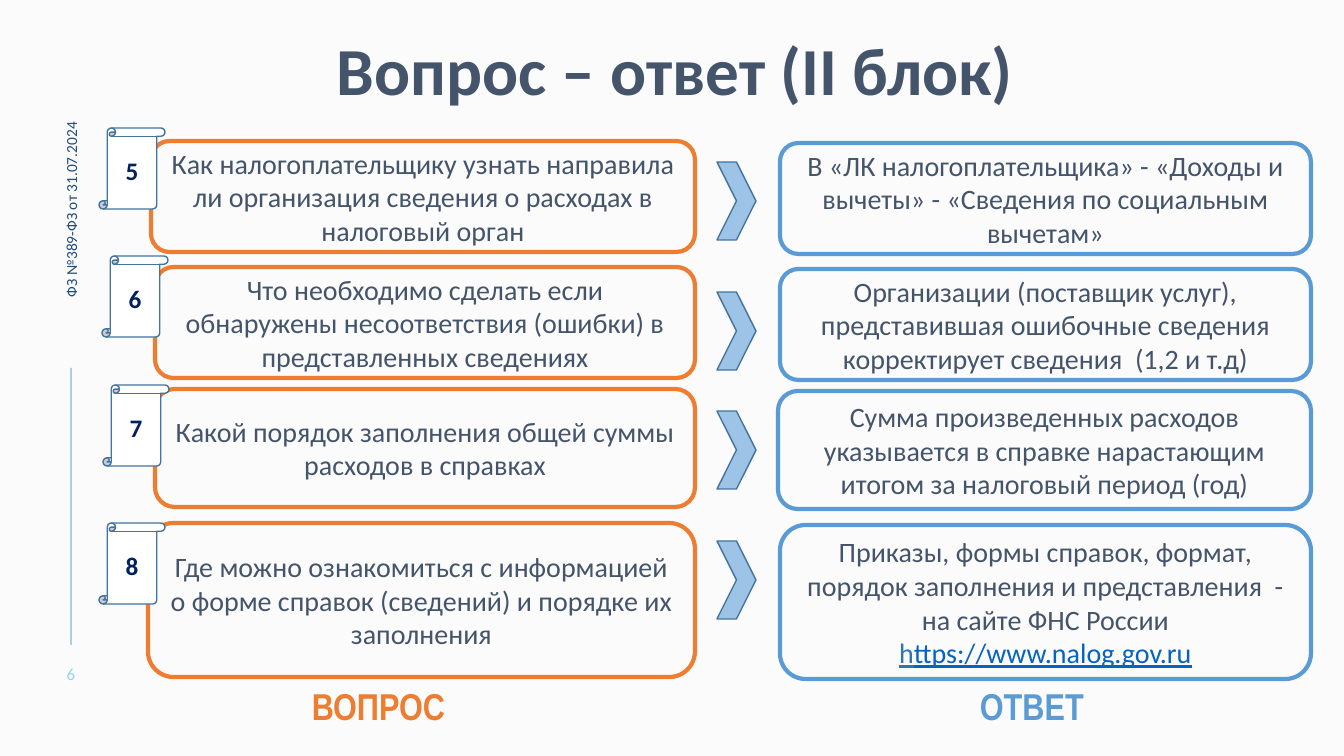
from lxml.etree import SubElement
from pptx import Presentation
from pptx.dml.color import RGBColor
from pptx.enum.shapes import MSO_CONNECTOR as LINE, MSO_SHAPE as SHAPE
from pptx.enum.text import MSO_ANCHOR as ANCHOR, MSO_AUTO_SIZE as FIT, PP_ALIGN as ALIGN
from pptx.oxml.ns import qn
from pptx.util import Pt

SCALE = 914400 / 100.8
ORANGE, BLUE, SLATE, STEEL = "ED7D31", "5B9BD5", "44546A", "43739E"
ASK_END, ANSWER_END, ARROW_LEFT = 695, 1311, 717

ROWS = [
    ("5", (151, 141, 1160, 111), (-52, -13), 21, 780,
     "Как налогоплательщику узнать направила ли организация сведения о расходах в налоговый орган",
     ["В «ЛК налогоплательщика» - «Доходы и вычеты» - «Сведения по социальным вычетам»"]),
    ("6", (155, 267, 1156, 111), (-53, -11), 25, 780,
     "Что необходимо сделать если обнаружены несоответствия (ошибки) в представленных сведениях",
     ["Организации (поставщик услуг), представившая ошибочные сведения корректирует сведения  (1,2 и т.д)"]),
    ("7", (155, 389, 1156, 118), (-52, -4), 22, 778,
     "Какой порядок заполнения общей суммы расходов в справках",
     ["Сумма произведенных расходов указывается в справке нарастающим итогом за налоговый период (год)"]),
    ("8", (148, 523, 1163, 154), (-49, 0), 18, 780,
     "Где можно ознакомиться с информацией о форме справок (сведений) и порядке их заполнения",
     ["Приказы, формы справок, формат, порядок заполнения и представления  - на сайте ФНС России ",
      ("h", "2E75B6"), ("ttps://www.nalog.gov.ru", "0563C1")]),
]


def px(n):
    return round(n * SCALE)


def place(box):
    return [px(n) for n in box]


def tint(code):
    return RGBColor.from_string(code)


def write(shape, parts, size=20, color=SLATE, bold=False, font="Calibri",
          align=ALIGN.CENTER, anchor=ANCHOR.MIDDLE, inset=None):
    frame = shape.text_frame
    frame.word_wrap = True
    frame.auto_size = FIT.NONE
    frame.vertical_anchor = anchor
    if inset is not None:
        frame.margin_left = frame.margin_right = px(inset)
        frame.margin_top = frame.margin_bottom = px(inset)
    para = frame.paragraphs[0]
    para.alignment = align
    for part in parts:
        linked = isinstance(part, tuple)
        text, code = part if linked else (part, color)
        run = para.add_run()
        run.text = text
        run.font.name = font
        run.font.size = Pt(size)
        run.font.bold = bold
        run.font.underline = linked
        run.font.color.rgb = tint(code)


def label(slide, box, text, **style):
    shape = slide.shapes.add_textbox(*place(box))
    write(shape, [text], **style)
    return shape


def draw(slide, kind, box, line, width=1, fill=None):
    shape = slide.shapes.add_shape(kind, *place(box))
    shape.shadow.inherit = False
    if fill:
        shape.fill.solid()
        shape.fill.fore_color.rgb = tint(fill)
    else:
        shape.fill.background()
    shape.line.color.rgb = tint(line)
    shape.line.width = Pt(width)
    return shape


def header(slide, box):
    title = slide.shapes.title
    title.left, title.top, title.width, title.height = place(box)
    write(title, ["Вопрос – ответ (II блок)"], size=48, bold=True, anchor=ANCHOR.TOP)


def row(slide, box, num, scroll, drop, start, ask, answer):
    left, top, width, height = box
    card = draw(slide, SHAPE.ROUNDED_RECTANGLE, (left, top, ASK_END - left, height), ORANGE, 3)
    write(card, [ask])
    card = draw(slide, SHAPE.ROUNDED_RECTANGLE,
                (start, top + 2, left + width - start, height), BLUE, 3)
    write(card, answer)
    badge = draw(slide, SHAPE.VERTICAL_SCROLL,
                 (left + scroll[0], top + scroll[1], 66, 81), STEEL, fill="FFFFFF")
    write(badge, [num], size=18, color="002060", bold=True)
    draw(slide, SHAPE.CHEVRON, (ARROW_LEFT, top + drop, 39, 78), STEEL, fill="9DC3E6")


def legend(slide, box):
    left, top, width, height = box
    for shift, text, color in ((0, "ВОПРОС", ORANGE), (668, "ОТВЕТ", BLUE)):
        label(slide, (left + shift, top, width, height), text, size=26.7, color=color,
              bold=True, font="Arial Narrow", align=ALIGN.LEFT, anchor=ANCHOR.TOP)


def margin(slide, box):
    left, top, width, height = box
    mid = left + width // 2
    law = label(slide, (mid - 137, top + 79, 274, 21), "ФЗ №389-ФЗ от 31.07.2024",
                size=11, color="1F4E79", inset=0)
    law.rotation = 270
    rule = slide.shapes.add_connector(LINE.STRAIGHT, *place((mid, top + 248, mid, top + 525)))
    rule.line.color.rgb = tint("2E75B6")
    rule.line.width = Pt(1)
    code = rule.line.fill._xPr.find(qn("a:solidFill"))[0]
    SubElement(code, qn("a:alpha")).set("val", "55000")
    SubElement(rule._element.spPr, qn("a:effectLst"))
    label(slide, (left, top + height - 20, width, 20), "6", size=12, color="96D3ED", inset=0)


def main():
    deck = Presentation()
    deck.slide_width, deck.slide_height = px(1344), px(756)
    slide = deck.slides.add_slide(deck.slide_layouts[5])
    slide.background.fill.solid()
    slide.background.fill.fore_color.rgb = tint("FBFBFB")
    header(slide, (61, 23, 1228, 92))
    for num, box, scroll, drop, start, ask, answer in ROWS:
        row(slide, box, num, scroll, drop, start, ask, answer)
    legend(slide, (302, 678, 240, 55))
    margin(slide, (46, 120, 50, 564))
    deck.save("out.pptx")


if __name__ == "__main__":
    main()
